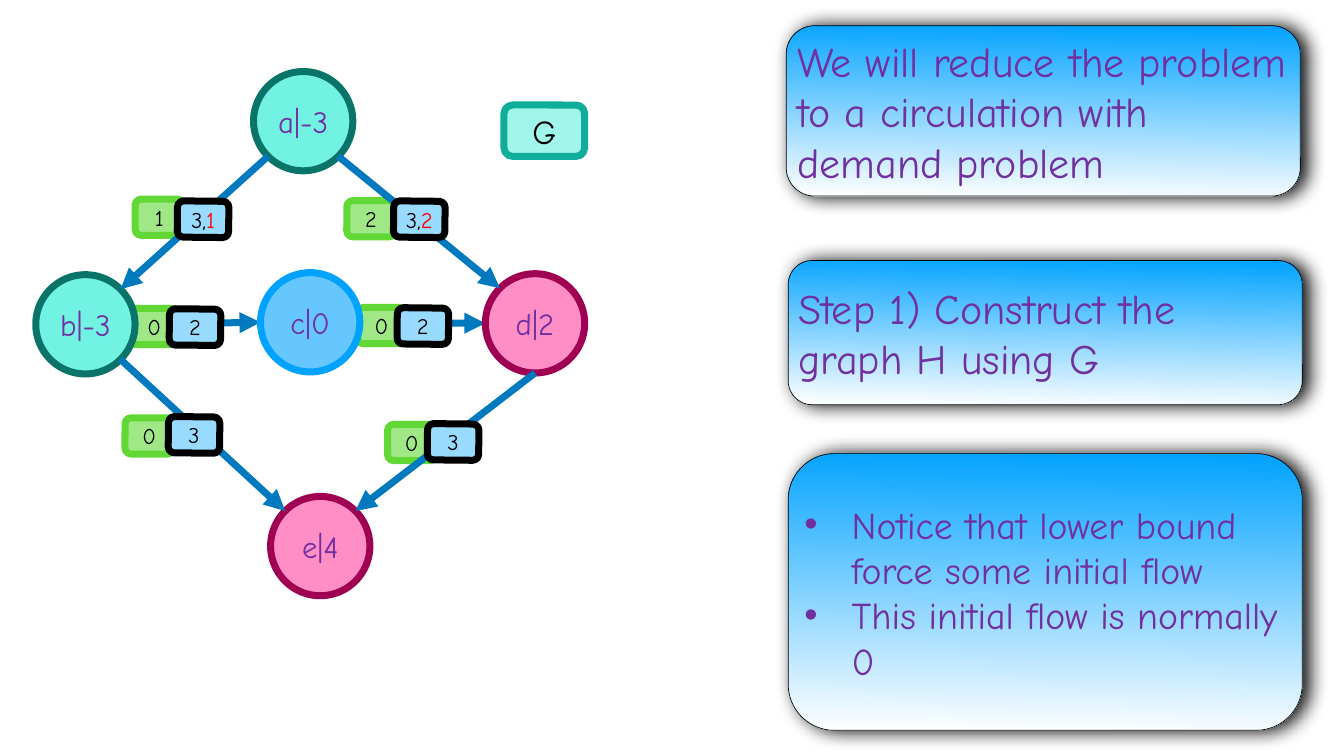
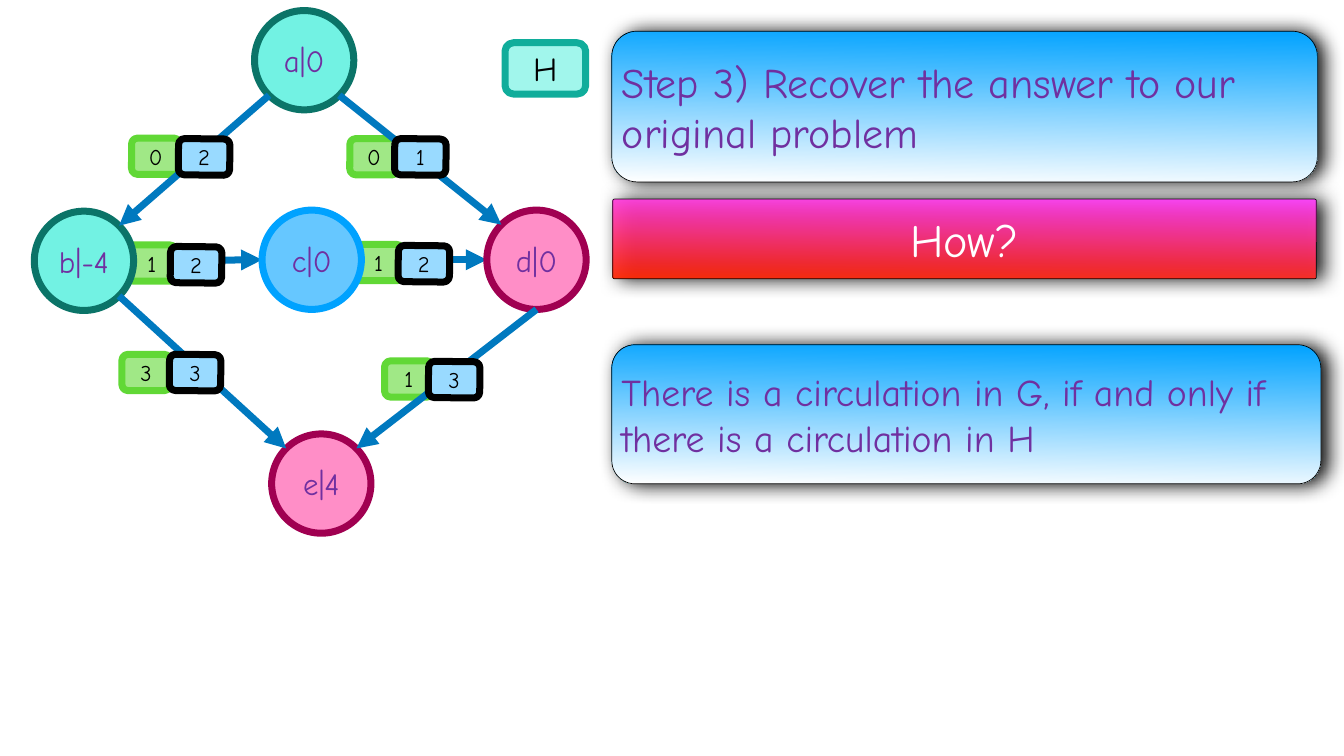
from math import cos, radians, sin

from lxml.etree import SubElement
from pptx import Presentation
from pptx.dml.color import RGBColor
from pptx.enum.shapes import MSO_CONNECTOR, MSO_SHAPE
from pptx.enum.text import MSO_ANCHOR, MSO_AUTO_SIZE, PP_ALIGN
from pptx.oxml.ns import qn
from pptx.util import Pt

FONT = "Comic Neue"
COLORS = {
    "text": "7030A0", "black": "000000", "white": "FFFFFF", "flow": "FF0000",
    "arrow": "0079BF", "sky": "00A2FF", "pink": "FF40FF", "red": "FF2600",
    "supply": "72F2E3", "supply_line": "0B7468",
    "neutral": "66C7FF", "neutral_line": "00A2FF",
    "demand": "FF8EC7", "demand_line": "A00051",
    "lower": "A0E886", "lower_line": "61D836",
    "capacity": "99DAFF", "capacity_line": "000000",
    "name": "A1F6EC", "name_line": "10AD9B",
}
FRAME_FORMAT = {
    "word_wrap": True, "vertical_anchor": MSO_ANCHOR.MIDDLE,
    "margin_left": Pt(4), "margin_right": Pt(4),
    "margin_top": Pt(4), "margin_bottom": Pt(4),
}
NODE_SIZE = 141.84
THICK_LINE = 10
BULLET_INDENT = 67.5
NODE_KINDS = {"a": "supply", "b": "supply", "c": "neutral", "d": "demand", "e": "demand"}

# Edge: clockwise angles (0 is right) where it leaves and enters, capacity box place in G
EDGES = {
    "ab": (135, 315, (253.4, 287.3)),
    "ad": (45, 225, (562.3, 287.3)),
    "bc": (0, 180, (241.9, 441.4)),
    "cd": (0, 180, (567.4, 439.9)),
    "be": (45, 225, (240.5, 595.4)),
    "de": (90, 315, (610.6, 605.5)),
}

# Nodes: demand and place; bounds: lower bound, its place, capacity with optional flow
GRAPH_G = {
    "name": "G", "shift": (0, 0),
    "nodes": {
        "a": ("-3", 362.2, 102.2), "b": ("-3", 51.1, 392.4), "c": ("0", 372.2, 389.5),
        "d": ("2", 693.4, 391), "e": ("4", 386.6, 709.2),
    },
    "bounds": {
        "ab": ("1", (193, 284.4), ("3,", "1")),
        "ad": ("2", (495.4, 286.6), ("3,", "2")),
        "bc": ("0", (185.8, 440.6), ("2",)),
        "cd": ("0", (510.5, 439.2), ("2",)),
        "be": ("0", (178.6, 596.9), ("3",)),
        "de": ("0", (553.7, 606.2), ("3",)),
    },
}
GRAPH_H = {
    "name": "H", "shift": (1.5, -89),
    "nodes": {
        "a": ("0", 363.6, 15.1), "b": ("-4", 49, 301.7), "c": ("0", 374.4, 300.2),
        "d": ("0", 695.5, 300.2), "e": ("4", 388.1, 619.9),
    },
    "bounds": {
        "ab": ("0", (187.9, 197.3), ("2",)),
        "ad": ("0", (499.7, 198), ("1",)),
        "bc": ("1", (182.2, 349.9), ("2",)),
        "cd": ("1", (506.2, 349.2), ("2",)),
        "be": ("3", (174.2, 506.2), ("3",)),
        "de": ("1", (549.4, 515.5), ("3",)),
    },
}


def rgb(name):
    return RGBColor.from_string(COLORS[name])


def add_bullet(paragraph):
    properties = paragraph._p.get_or_add_pPr()
    properties.set("marL", str(Pt(BULLET_INDENT)))
    properties.set("indent", str(-Pt(BULLET_INDENT)))
    SubElement(properties, qn("a:buFont"), typeface="Arial")
    SubElement(properties, qn("a:buChar"), char="•")


def write_text(shape, paragraphs, size, color, align=PP_ALIGN.CENTER, bullets=False):
    """Write paragraphs, each a list of (text, colour) runs or a plain string."""
    frame = shape.text_frame
    for key, value in FRAME_FORMAT.items():
        setattr(frame, key, value)
    for index, runs in enumerate(paragraphs):
        paragraph = frame.add_paragraph() if index else frame.paragraphs[0]
        paragraph.alignment = align
        if bullets:
            add_bullet(paragraph)
        for text, run_color in [(runs, color)] if isinstance(runs, str) else runs:
            run = paragraph.add_run()
            run.text = text
            run.font.color.rgb = rgb(run_color)
            for key, value in {"name": FONT, "size": Pt(size)}.items():
                setattr(run.font, key, value)


def add_preset(slide, preset, box, line_color, line_width):
    shape = slide.shapes.add_shape(preset, *(Pt(value) for value in box))
    shape.shadow.inherit = False
    shape.line.color.rgb = rgb(line_color)
    shape.line.width = Pt(line_width)
    return shape


def add_label(slide, preset, box, kind, runs, size, color="black"):
    """Add a solid shape with a thick outline and one centred line of text."""
    shape = add_preset(slide, preset, box, kind + "_line", THICK_LINE)
    shape.fill.solid()
    shape.fill.fore_color.rgb = rgb(kind)
    write_text(shape, [runs], size, color)
    shape.text_frame.auto_size = MSO_AUTO_SIZE.SHAPE_TO_FIT_TEXT
    return shape


def add_card(slide, box, paragraphs, size, color="text", align=PP_ALIGN.LEFT,
             gradient=("sky", "white"), bullets=False, opacity=None, corner=None):
    """Add a rounded card with a vertical gradient and a soft shadow."""
    card = add_preset(slide, MSO_SHAPE.ROUNDED_RECTANGLE, box, "black", 1)
    if corner is not None:
        card.adjustments[0] = corner
    card.fill.gradient()
    card.fill.gradient_angle = 269
    for stop, name in zip(card.fill.gradient_stops, gradient):
        stop.color.rgb = rgb(name)
    properties = card._element.spPr
    if opacity is not None:
        for element in list(properties.iter(qn("a:srgbClr"))):
            SubElement(element, qn("a:alpha"), val=str(opacity * 1000))
    shadow = SubElement(properties.find(qn("a:effectLst")), qn("a:outerShdw"),
                        blurRad=str(Pt(28)), dist=str(Pt(9)), dir="0", rotWithShape="0")
    shadow_color = SubElement(shadow, qn("a:srgbClr"), val=COLORS["black"])
    SubElement(shadow_color, qn("a:alpha"), val="97000")
    write_text(card, paragraphs, size, color, align, bullets)


def rim_point(node, angle):
    """Return the point of a node's outline at a clockwise angle."""
    radius = NODE_SIZE / 2
    _, left, top = node
    return (Pt(left + radius + radius * cos(radians(angle))),
            Pt(top + radius + radius * sin(radians(angle))))


def add_arrow(slide, nodes, edge):
    source, target = edge
    leave, enter, _ = EDGES[edge]
    arrow = slide.shapes.add_connector(
        MSO_CONNECTOR.STRAIGHT,
        *rim_point(nodes[source], leave), *rim_point(nodes[target], enter))
    arrow.line.color.rgb = rgb("arrow")
    arrow.line.width = Pt(THICK_LINE)
    SubElement(arrow.line._get_or_add_ln(), qn("a:tailEnd"), type="triangle")
    SubElement(arrow._element.spPr, qn("a:effectLst"))


def add_graph(slide, graph):
    nodes, bounds = graph["nodes"], graph["bounds"]
    shift_x, shift_y = graph["shift"]
    rounded = MSO_SHAPE.ROUNDED_RECTANGLE
    level_edges = ("cd", "bc")

    # Level arrows and lower bounds lie behind the nodes
    for edge in level_edges:
        add_arrow(slide, nodes, edge)
    for lower, place, _ in bounds.values():
        add_label(slide, rounded, (*place, 69.1, 51.8), "lower", lower, 32)

    # Nodes, then the slanted arrows
    for letter, (demand, left, top) in nodes.items():
        add_label(slide, MSO_SHAPE.OVAL, (left, top, NODE_SIZE, NODE_SIZE),
                  NODE_KINDS[letter], f"{letter}|{demand}", 44, "text")
    for edge in EDGES:
        if edge not in level_edges:
            add_arrow(slide, nodes, edge)

    # Capacities, with the initial flow in red
    for edge, (_, _, capacity) in bounds.items():
        left, top = EDGES[edge][2]
        box = (left + shift_x, top + shift_y, 73.4, 51.8)
        runs = list(zip(capacity, ("black", "flow")))
        add_label(slide, rounded, box, "capacity", runs, 32).rotation = 0.6

    # Graph name
    add_label(slide, rounded, (720 + shift_x, 150 + shift_y, 115.2, 73.4),
              "name", graph["name"], 48)


def build_construction_slide(slide):
    add_graph(slide, GRAPH_G)
    add_card(slide, (1123.2, 36.7, 734.4, 243.4),
             ["We will reduce the problem to a circulation with demand problem"], 60)
    add_card(slide, (1126, 372.2, 734.4, 206),
             ["Step 1) Construct the graph H using G"], 60)
    add_card(slide, (1126, 648, 734.4, 395.3),
             ["Notice that lower bound force some initial flow",
              "This initial flow is normally 0"], 54, bullets=True)


def build_recovery_slide(slide):
    add_graph(slide, GRAPH_H)
    add_card(slide, (874, 44.6, 1008, 215.3),
             ["Step 3) Recover the answer to our original problem"], 60)
    add_card(slide, (875.5, 284.4, 1005, 113.8), ["How?"], 66, "white", PP_ALIGN.CENTER,
             ("pink", "red"), opacity=93, corner=0.02)
    add_card(slide, (874, 492.5, 1013, 198.7),
             ["There is a circulation in G, if and only if there is a circulation in H"], 54)


def main():
    presentation = Presentation()
    presentation.slide_width, presentation.slide_height = Pt(1920), Pt(1080)
    for build in (build_construction_slide, build_recovery_slide):
        build(presentation.slides.add_slide(presentation.slide_layouts[6]))
    presentation.save("out.pptx")


if __name__ == "__main__":
    main()
